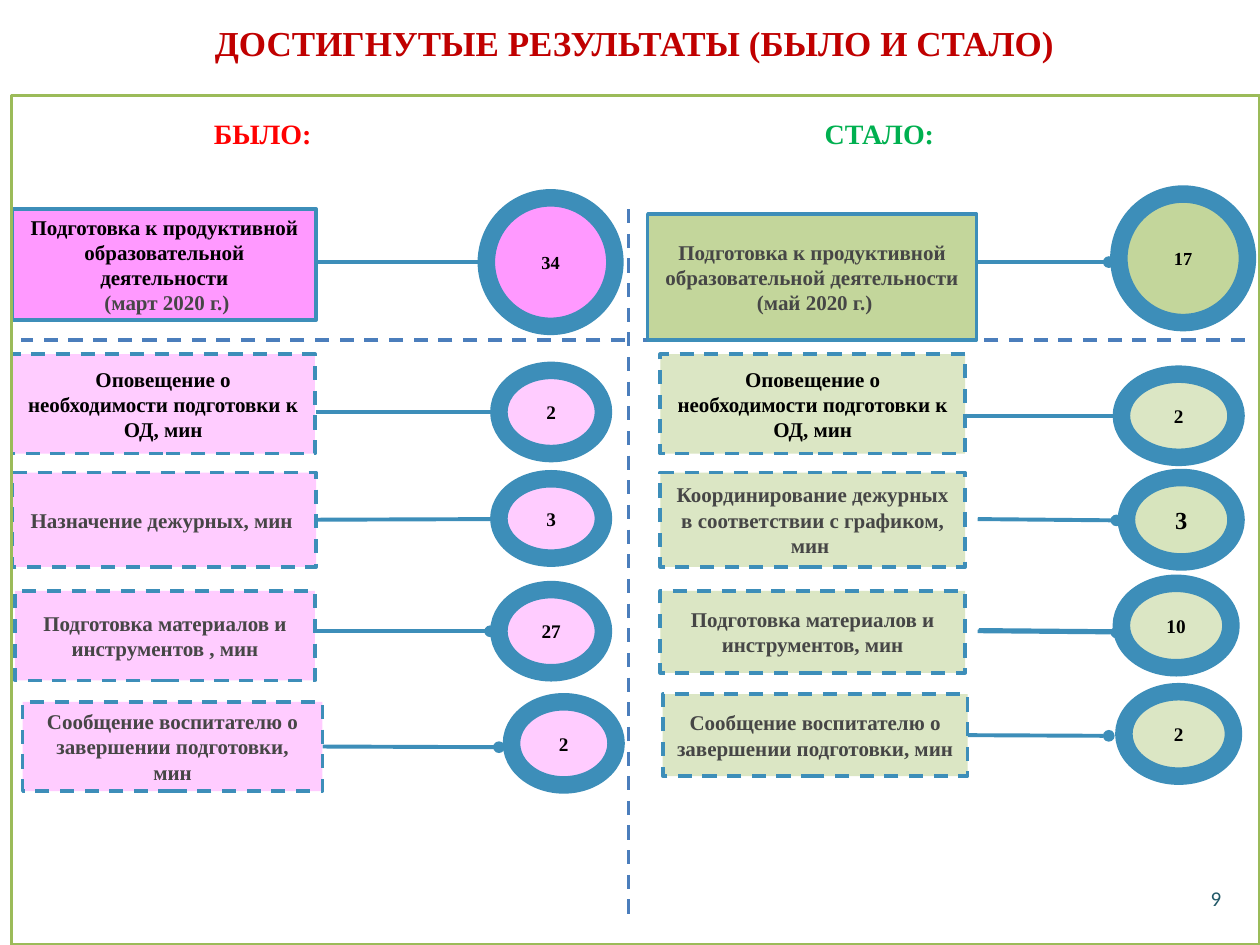
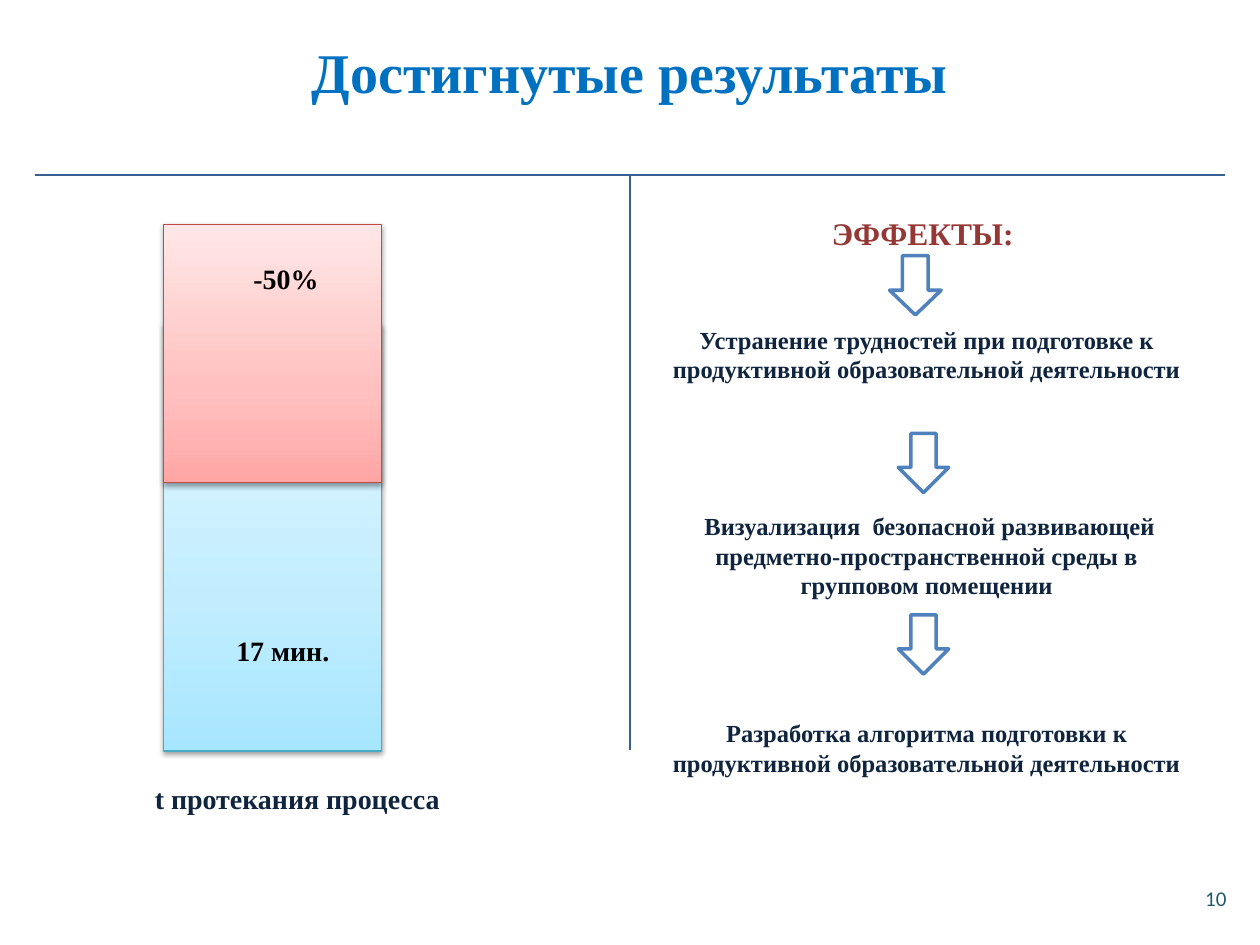
from dataclasses import dataclass

from lxml.etree import SubElement
from pptx import Presentation
from pptx.dml.color import RGBColor
from pptx.enum.dml import MSO_LINE
from pptx.enum.shapes import MSO_CONNECTOR, MSO_SHAPE
from pptx.enum.text import MSO_ANCHOR, PP_ALIGN
from pptx.oxml.ns import qn
from pptx.util import Emu, Pt

EMU_PER_PX = 9144


@dataclass(frozen=True)
class Theme:
    serif: str = "Times New Roman"
    sans: str = "Calibri"
    black: str = "000000"
    grey: str = "464646"
    navy: str = "0F243E"
    teal: str = "215968"
    ring: str = "3D8EB9"
    divider: str = "4B7EBC"
    rule: str = "376092"
    frame: str = "9BBB59"
    white: str = "FFFFFF"
    arrow: str = "4F81BD"
    dark_red: str = "C00000"
    red: str = "FF0000"
    green: str = "00B050"
    blue: str = "0070C0"
    brown: str = "953735"
    pink: str = "FF99FF"
    pale_pink: str = "FFCCFF"
    olive: str = "C3D69B"
    pale_olive: str = "DBE6C4"
    mid_olive: str = "D7E4BD"
    small: float = 10.5
    count: int = 11
    label: int = 12
    body: int = 14
    heading: int = 16
    effects: int = 18
    results: int = 20
    title: int = 32


T = Theme()

PREPARATION = "Подготовка к продуктивной образовательной деятельности"
NOTICE = "Оповещение о необходимости подготовки к ОД, мин"
REPORT = "Сообщение воспитателю о завершении подготовки, мин"

COLUMN_HEADINGS = [
    ("БЫЛО:", (51, 88, 315, 37), T.red),
    ("СТАЛО:", (521, 88, 354, 37), T.green),
]

TOTALS = [
    dict(label=[(PREPARATION, dict(color=T.black)), " (март 2020 г.)"], box=(10, 166, 241, 88),
         links=[(243, 208, 386, 208)], value="34", ring=(386, 157, 102, 102), fill=T.pink),
    dict(label=[PREPARATION, " (май 2020 г.)"], box=(514, 170, 261, 100),
         links=[(767, 208, 880, 208)], value="17", ring=(888, 154, 102, 102), fill=T.olive),
]

STEPS_BEFORE = [
    dict(label=[(NOTICE, dict(color=T.black))], box=(9, 281, 241, 79),
         links=[(251, 327, 396, 327)], value="2", ring=(396, 294, 83, 66)),
    dict(label=["Назначение дежурных, мин "], box=(10, 375, 241, 75),
         links=[(251, 412, 396, 412)], value="3", ring=(396, 380, 83, 63)),
    dict(label=["Подготовка материалов и инструментов , мин"], box=(12, 469, 238, 71),
         links=[(251, 501, 389, 501)], value="27", ring=(396, 468, 83, 66)),
    dict(label=[REPORT], box=(18, 557, 238, 71),
         links=[(258, 593, 396, 593)], value="2", ring=(406, 557, 83, 66)),
]

STEPS_AFTER = [
    dict(label=[(NOTICE, dict(color=T.black))], box=(524, 281, 242, 79),
         links=[(765, 330, 890, 330)], value="2", ring=(890, 297, 91, 66)),
    dict(label=["Координирование дежурных в соответствии с графиком, мин "], box=(524, 375, 242, 75),
         links=[(776, 412, 886, 413)], value="3", ring=(894, 379, 87, 67),
         ring_fill=T.mid_olive, value_size=T.body),
    dict(label=["Подготовка материалов и инструментов, мин"], box=(524, 469, 242, 65),
         links=[(777, 500, 888, 501), (776, 501, 886, 502)], value="10", ring=(890, 463, 87, 67)),
    dict(label=[REPORT], box=(526, 551, 242, 65),
         links=[(769, 583, 880, 584)], value="2", ring=(892, 549, 87, 67)),
]

DIVIDERS = [(499, 166, 499, 733), (496, 270, 17, 270), (988, 270, 510, 270)]

EFFECTS = [
    ("ЭФФЕКТЫ:\u00a0", dict(size=T.effects, color=T.brown)),
    ("Устранение трудностей при подготовке к продуктивной образовательной деятельности",
     dict(before=41.5)),
    (" Визуализация  безопасной развивающей предметно-пространственной среды в групповом помещении",
     dict(before=73)),
    ("Разработка алгоритма подготовки к продуктивной образовательной деятельности",
     dict(before=68)),
]
EFFECT_ARROWS = [((706, 203, 41, 47), 0.478), ((713, 344, 40, 47), 0.5), ((713, 488, 40, 47), 0.5)]

TIME_BARS = [
    ((130, 257, 173, 339), [(0, "A7E6FF"), (35, "C1EDFF"), (100, "E7F8FF")], "46AAC5"),
    ((130, 178, 173, 205), [(0, "FFA6A5"), (35, "FFC0BF"), (100, "FFE7E7")], "BF4C48"),
]
TIME_LABELS = [
    ("-50%", (152, 203, 150, 37), T.black),
    ("17 мин.", (146, 498, 157, 37), T.black),
    ("t протекания процесса", (106, 615, 260, 37), T.navy),
]
RULES = [(28, 139, 972, 139), (500, 139, 500, 595)]


def px(*lengths):
    return [Emu(length * EMU_PER_PX) for length in lengths]


def rgb(color):
    return RGBColor.from_string(color)


def write(shape, paragraphs, size=T.label, color=T.black, font=T.serif, bold=True,
          anchor=MSO_ANCHOR.MIDDLE):
    frame = shape.text_frame
    frame.word_wrap = True
    frame.vertical_anchor = anchor
    for index, entry in enumerate(paragraphs):
        words, own = entry if isinstance(entry, tuple) else (entry, {})
        paragraph = frame.paragraphs[0] if index == 0 else frame.add_paragraph()
        paragraph.alignment = PP_ALIGN.CENTER
        if "before" in own:
            paragraph.space_before = Pt(own["before"])
        run = paragraph.add_run()
        run.text = words
        run.font.name = font
        run.font.bold = bold
        run.font.size = Pt(own.get("size", size))
        run.font.color.rgb = rgb(own.get("color", color))


def add_text(slide, paragraphs, area, **formatting):
    write(slide.shapes.add_textbox(*px(*area)), paragraphs, **formatting)


def add_outlined(slide, preset, area, line, width, fill=None, dashed=False):
    shape = slide.shapes.add_shape(preset, *px(*area))
    shape.shadow.inherit = False
    if fill:
        shape.fill.solid()
        shape.fill.fore_color.rgb = rgb(fill)
    else:
        shape.fill.background()
    shape.line.color.rgb = rgb(line)
    shape.line.width = Pt(width)
    if dashed:
        shape.line.dash_style = MSO_LINE.DASH
    return shape


def add_line(slide, ends, color, width, dashed=False, dot=False):
    line = slide.shapes.add_connector(MSO_CONNECTOR.STRAIGHT, *px(*ends))
    line.line.color.rgb = rgb(color)
    line.line.width = Pt(width)
    if dashed:
        line.line.dash_style = MSO_LINE.DASH
    properties = line._element.spPr
    if dot:
        SubElement(properties.find(qn("a:ln")), qn("a:tailEnd"), type="oval")
    SubElement(properties, qn("a:effectLst"))
    return line


def add_page_number(slide, number):
    add_text(slide, [str(number)], (946, 697, 38, 31), color=T.teal, font=T.sans, bold=False)


def add_step(slide, label, box, links, value, ring, fill, ring_fill=None,
             value_size=T.count, dashed=True):
    lines = [add_line(slide, ends, T.ring, 2.25, dot=True) for ends in links]
    step = add_outlined(slide, MSO_SHAPE.RECTANGLE, box, T.ring, 2, fill, dashed)
    write(step, label, color=T.grey)
    left, top, width, height = box
    for line, (x, y, _, _) in zip(lines, links):
        if abs(x - left - width) <= 2 and abs(y - top - height / 2) <= 2:
            line.begin_connect(step, 3)
    circle = add_outlined(slide, MSO_SHAPE.FLOWCHART_CONNECTOR, ring, T.ring, 10, ring_fill or fill)
    write(circle, [value], size=value_size)


def add_time_bar(slide, area, stops, line):
    bar = add_outlined(slide, MSO_SHAPE.RECTANGLE, area, line, 0.75)
    bar.fill.gradient()
    bar.fill.gradient_angle = 90
    properties = bar._element.spPr
    stop_list = properties.find(".//" + qn("a:gsLst"))
    for stop in list(stop_list):
        stop_list.remove(stop)
    for percent, color in stops:
        stop = SubElement(stop_list, qn("a:gs"), pos=str(percent * 1000))
        SubElement(stop, qn("a:srgbClr"), val=color)
    shadow = SubElement(properties.find(qn("a:effectLst")), qn("a:outerShdw"),
                        blurRad="40000", dist="20000", dir="5400000", rotWithShape="0")
    tint = SubElement(shadow, qn("a:srgbClr"), val=T.black)
    SubElement(tint, qn("a:alpha"), val="38000")


def build_comparison(slide):
    for ends in DIVIDERS:
        add_line(slide, ends, T.divider, 2, dashed=True)
    add_text(slide, ["ДОСТИГНУТЫЕ РЕЗУЛЬТАТЫ (БЫЛО И СТАЛО) "], (12, -8, 990, 84),
             size=T.results, color=T.dark_red)
    for total in TOTALS:
        add_step(slide, **total, value_size=T.small, dashed=False)
    for steps, fill in ((STEPS_BEFORE, T.pale_pink), (STEPS_AFTER, T.pale_olive)):
        for step in steps:
            add_step(slide, **step, fill=fill)
    add_outlined(slide, MSO_SHAPE.RECTANGLE, (9, 76, 991, 674), T.frame, 2)
    for heading, area, color in COLUMN_HEADINGS:
        add_text(slide, [heading], area, size=T.heading, color=color, anchor=MSO_ANCHOR.TOP)


def build_effects(slide):
    add_text(slide, ["Достигнутые результаты"], (12, 21, 976, 71), size=T.title, color=T.blue)
    for ends in RULES:
        add_line(slide, ends, T.rule, 1.5)
    for area, stops, line in TIME_BARS:
        add_time_bar(slide, area, stops, line)
    for label, area, color in TIME_LABELS:
        add_text(slide, [label], area, size=T.heading, color=color, anchor=MSO_ANCHOR.TOP)
    add_text(slide, EFFECTS, (524, 165, 423, 532), size=T.body, color=T.navy, anchor=MSO_ANCHOR.TOP)
    for area, head in EFFECT_ARROWS:
        arrow = add_outlined(slide, MSO_SHAPE.DOWN_ARROW, area, T.arrow, 2, T.white)
        arrow.adjustments[1] = head


def main():
    deck = Presentation()
    deck.slide_width, deck.slide_height = px(1000, 750)
    for number, build in enumerate((build_comparison, build_effects), start=9):
        slide = deck.slides.add_slide(deck.slide_layouts[6])
        build(slide)
        add_page_number(slide, number)
    deck.save("out.pptx")


if __name__ == "__main__":
    main()
